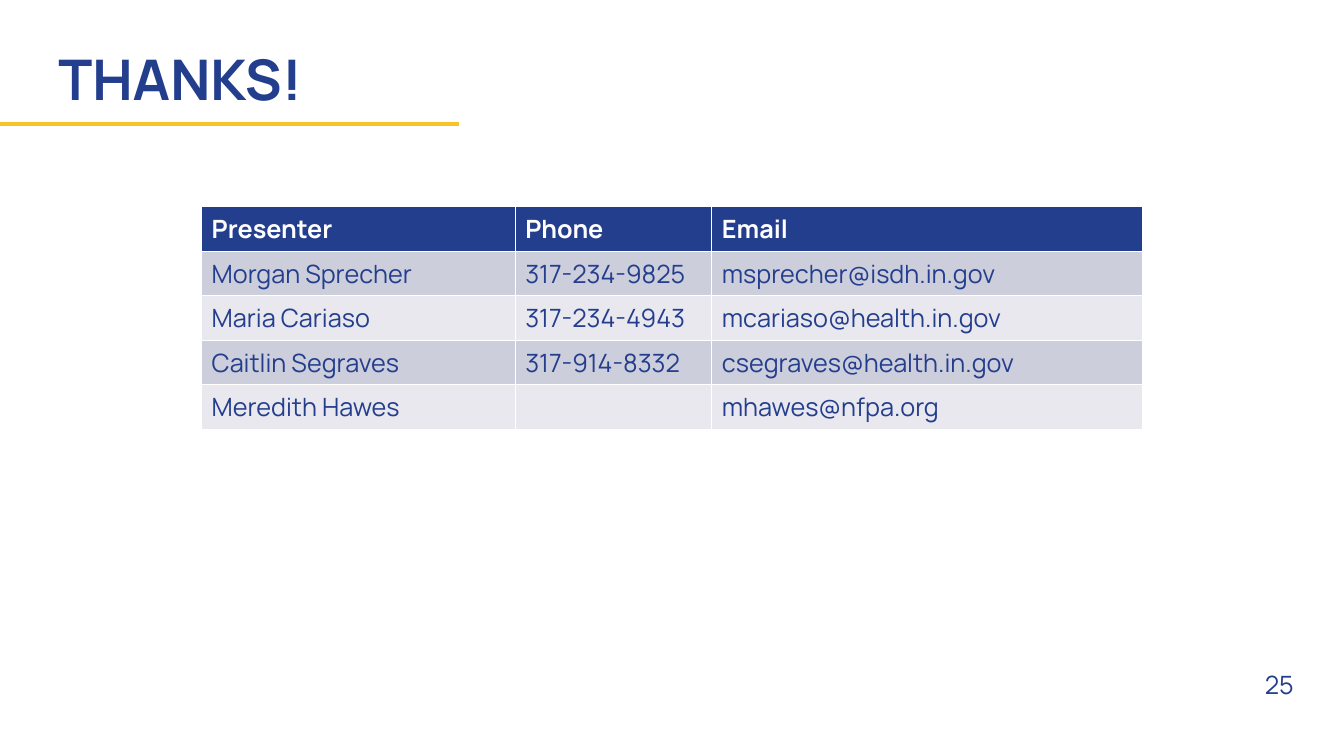
from pptx import Presentation
from pptx.dml.color import RGBColor
from pptx.enum.shapes import MSO_CONNECTOR
from pptx.enum.text import MSO_ANCHOR, PP_ALIGN
from pptx.util import Inches, Pt
from lxml import etree

NAVY, GOLD, WHITE = "243E8E", "F7C327", "FFFFFF"
BANDS = ["E8E8EE", "CDCEDB"]
A = "http://schemas.openxmlformats.org/drawingml/2006/main"


def rgb(value):
    return RGBColor.from_string(value)


def style(p, size, color=NAVY, bold=False):
    """Format every run of a paragraph."""
    for r in p.runs:
        r.font.name = "Manrope"
        r.font.size = Pt(size)
        r.font.bold = bold
        r.font.color.rgb = rgb(color)


prs = Presentation()
prs.slide_width, prs.slide_height = Inches(13.33), Inches(7.5)
s = prs.slides.add_slide(prs.slide_layouts[5])

# Title and the rule under it
title = s.shapes.title
title.left, title.top = Inches(0.48), Inches(0.4)
title.width, title.height = Inches(3.7), Inches(0.83)
tf = title.text_frame
tf.text = "THANKS!"
tf.vertical_anchor = MSO_ANCHOR.MIDDLE
p = tf.paragraphs[0]
p.alignment = PP_ALIGN.LEFT
p.line_spacing = 0.9
style(p, 40, bold=True)

rule = s.shapes.add_connector(MSO_CONNECTOR.STRAIGHT, Inches(-0.02), Inches(1.23),
                              Inches(4.55), Inches(1.23))
rule.line.color.rgb = rgb(GOLD)
rule.line.width = Pt(3)
etree.SubElement(rule._element.spPr, f"{{{A}}}effectLst")

# Contact table
contacts = [
    ("Presenter", "Phone", "Email"),
    ("Morgan Sprecher", "317-234-9825", "msprecher@isdh.in.gov"),
    ("Maria Cariaso", "317-234-4943", "mcariaso@health.in.gov"),
    ("Caitlin Segraves", "317-914-8332", "csegraves@health.in.gov"),
    ("Meredith Hawes", "", "mhawes@nfpa.org"),
]
col_widths = [3.11, 1.95, 4.27]
row_height = 0.44
table = s.shapes.add_table(len(contacts), len(col_widths), Inches(2), Inches(2.05),
                           Inches(sum(col_widths)),
                           Inches(row_height * len(contacts))).table
for column, width in zip(table.columns, col_widths):
    column.width = Inches(width)
for i, contact in enumerate(contacts):
    header = i == 0
    for j, value in enumerate(contact):
        cell = table.cell(i, j)
        cell.fill.solid()
        cell.fill.fore_color.rgb = rgb(NAVY if header else BANDS[i % 2])
        cell.text_frame.text = value
        style(cell.text_frame.paragraphs[0], 18, WHITE if header else NAVY, header)

# Page number
number = s.shapes.add_textbox(Inches(12.25), Inches(6.59), Inches(0.68), Inches(0.4))
tf = number.text_frame
tf.word_wrap = True
tf.vertical_anchor = MSO_ANCHOR.MIDDLE
tf.text = "25"
p = tf.paragraphs[0]
p.alignment = PP_ALIGN.RIGHT
style(p, 18)

prs.save("out.pptx")
